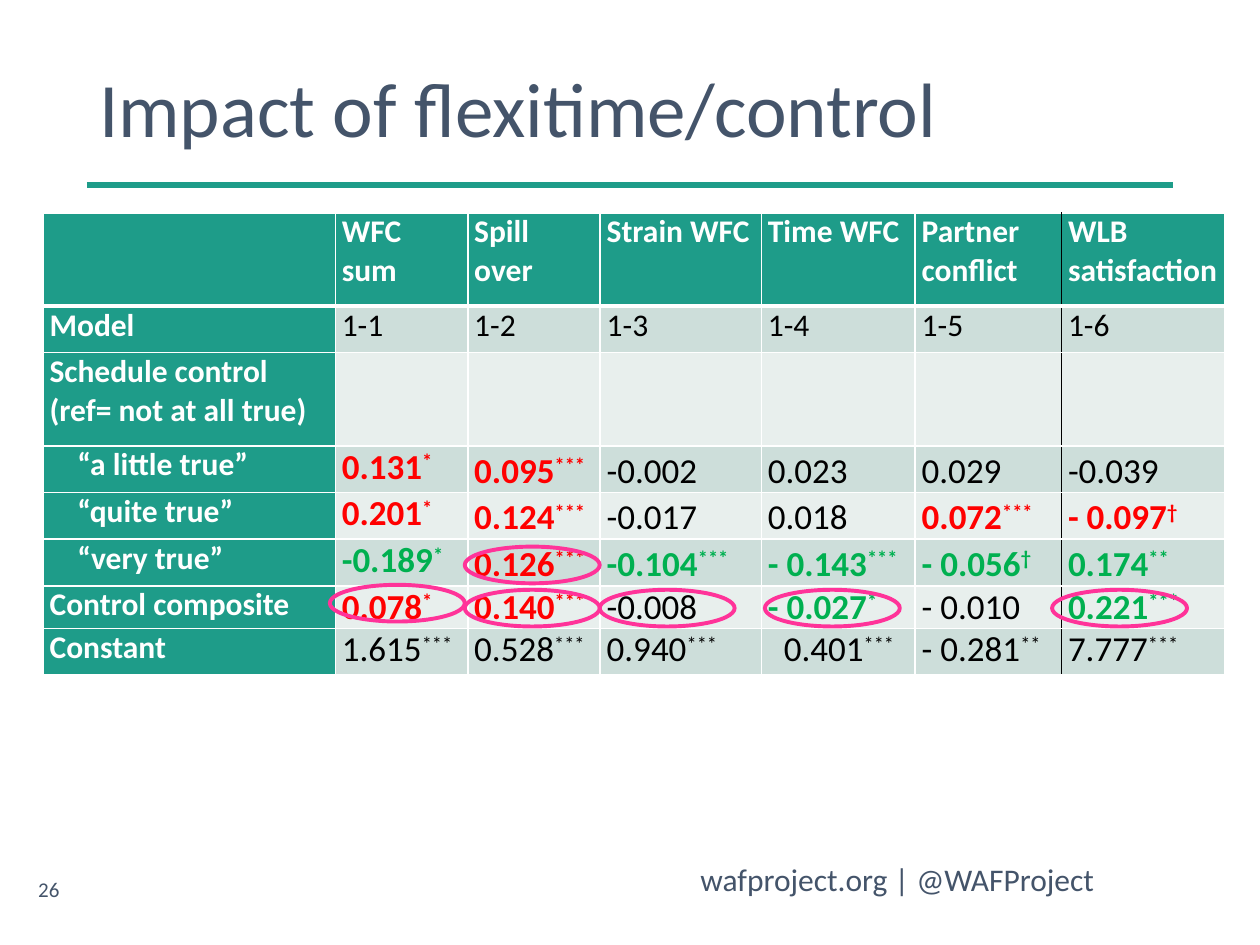
from lxml import etree
from pptx import Presentation
from pptx.dml.color import RGBColor
from pptx.enum.shapes import MSO_CONNECTOR as Connector, MSO_SHAPE as Shape
from pptx.enum.text import MSO_ANCHOR as Anchor, PP_ALIGN as Align
from pptx.oxml.ns import qn
from pptx.util import Cm, Pt

SLATE = RGBColor(0x44, 0x54, 0x6A)
TEAL = RGBColor(0x1E, 0x9C, 0x89)
BANDS = (RGBColor(0xE8, 0xEF, 0xED), RGBColor(0xCD, 0xDE, 0xDA))
WHITE = RGBColor(0xFF, 0xFF, 0xFF)
BLACK = RGBColor(0x00, 0x00, 0x00)
RED = RGBColor(0xFF, 0x00, 0x00)
GREEN = RGBColor(0x00, 0xB0, 0x50)
PINK = RGBColor(0xFF, 0x33, 0x99)
FONT = "Calibri"

COLUMN_WIDTHS = (5.89, 2.67, 2.67, 3.25, 3.1, 2.95, 3.29)
ROW_HEIGHTS = (1.88, 0.94, 1.88, 0.94, 0.94, 0.94, 0.86, 0.94)
ROWS = (
    ("", "WFC sum", "Spill over", "Strain WFC", "Time WFC", "Partner conflict", "WLB satisfaction"),
    ("Model", "1-1", "1-2", "1-3", "1-4", "1-5", "1-6"),
    ("Schedule control\n(ref= not at all true)", "", "", "", "", "", ""),
    ("“a little true”", "0.131*", "0.095***", "-0.002", "0.023", "0.029", "-0.039"),
    ("“quite true”", "0.201*", "0.124***", "-0.017", "0.018", "0.072***", "- 0.097†"),
    ("“very true”", "-0.189*", "0.126***", "-0.104***", "- 0.143***", "- 0.056†", "0.174**"),
    ("Control composite", "0.078*", "0.140***", "-0.008", "- 0.027*", "- 0.010", "0.221***"),
    ("Constant", "1.615***", "0.528***", "0.940***", "0.401***", "- 0.281**", "7.777***"),
)
LAST_COLUMN = len(COLUMN_WIDTHS) - 1
FIRST_ESTIMATE, CONSTANT = 3, len(ROWS) - 1
RINGS = ((9.37, 11.02), (6.65, 11.79), (9.37, 11.89), (12.09, 11.89), (15.42, 11.89), (21.21, 11.89))


def add_span(para, text, size, color, bold=False):
    span = para.add_run()
    span.text = text
    span.font.name = FONT
    span.font.size = Pt(size)
    span.font.bold = bold
    span.font.color.rgb = color
    return span


def add_label(page, text, size, left, top, width, height, anchor=Anchor.TOP, align=Align.LEFT):
    box = page.shapes.add_textbox(Cm(left), Cm(top), Cm(width), Cm(height))
    frame = box.text_frame
    frame.word_wrap = True
    frame.vertical_anchor = anchor
    para = frame.paragraphs[0]
    para.alignment = align
    add_span(para, text, size, SLATE)
    return para


def add_rule(page):
    rule = page.shapes.add_connector(Connector.STRAIGHT, Cm(1.75), Cm(3.73), Cm(23.65), Cm(3.73))
    rule.line.color.rgb = TEAL
    rule.line.width = Pt(3)
    etree.SubElement(rule.element.spPr, qn("a:effectLst"))


def set_border(cell, side, color, width):
    edge = etree.SubElement(cell._tc.get_or_add_tcPr(), qn(f"a:ln{side}"), w=str(Pt(width)))
    fill = etree.SubElement(edge, qn("a:solidFill"))
    etree.SubElement(fill, qn("a:srgbClr"), val=str(color))


def style_cell(cell, row, column):
    """Draw the borders first, as the schema wants them before the fill."""
    set_border(cell, "L", BLACK if column == LAST_COLUMN else WHITE, 1)
    set_border(cell, "R", BLACK if column == LAST_COLUMN - 1 else WHITE, 1)
    set_border(cell, "T", WHITE, 3 if row == 1 else 1)
    set_border(cell, "B", WHITE, 3 if row == 0 else 1)
    cell.fill.solid()
    cell.fill.fore_color.rgb = TEAL if row == 0 or column == 0 else BANDS[row % 2]
    cell.margin_left = cell.margin_right = Cm(0.13)
    cell.margin_top = cell.margin_bottom = 0
    if FIRST_ESTIMATE <= row < CONSTANT and column > 1:
        cell.vertical_anchor = Anchor.BOTTOM


def estimate_color(text, row, column):
    """Significant effects: red if they harm, green if they help."""
    if row == CONSTANT or text[-1] not in "*†":
        return BLACK
    harmful = text.startswith("-") == (column == LAST_COLUMN)
    return RED if harmful else GREEN


def indent_first_line(para, indent):
    para._p.get_or_add_pPr().set("indent", str(Cm(indent)))


def write_heading(cell, text):
    for index, line in enumerate(text.split("\n")):
        para = cell.text_frame.add_paragraph() if index else cell.text_frame.paragraphs[0]
        if line.startswith("“"):
            indent_first_line(para, 0.56)
        add_span(para, line, 18, WHITE, True)


def write_estimate(cell, text, row, column):
    para = cell.text_frame.paragraphs[0]
    color = estimate_color(text, row, column)
    bold = color != BLACK
    number = text.rstrip("*†")
    marks = text[len(number):]
    if row == CONSTANT and column == 4:
        indent_first_line(para, 0.32)
    add_span(para, number, 20, color, bold)
    if marks:
        span = add_span(para, marks, 20, color, bold)
        span._r.get_or_add_rPr().set("baseline", "30000")


def add_results_table(page):
    table = page.shapes.add_table(
        len(ROWS), len(COLUMN_WIDTHS), Cm(0.87), Cm(4.29),
        Cm(sum(COLUMN_WIDTHS)), Cm(sum(ROW_HEIGHTS))).table
    table.first_row = table.horz_banding = False
    for column, width in zip(table.columns, COLUMN_WIDTHS):
        column.width = Cm(width)
    for row, (height, texts) in enumerate(zip(ROW_HEIGHTS, ROWS)):
        table.rows[row].height = Cm(height)
        for column, text in enumerate(texts):
            cell = table.cell(row, column)
            style_cell(cell, row, column)
            if not text:
                continue
            if row == 0 or column == 0:
                write_heading(cell, text)
            elif row < FIRST_ESTIMATE:
                add_span(cell.text_frame.paragraphs[0], text, 18, BLACK)
            else:
                write_estimate(cell, text, row, column)


def add_ring(page, left, top):
    ring = page.shapes.add_shape(Shape.OVAL, Cm(left), Cm(top), Cm(2.72), Cm(0.74))
    ring.shadow.inherit = False
    ring.fill.background()
    ring.line.color.rgb = PINK
    ring.line.width = Pt(2.25)


def main():
    deck = Presentation()
    deck.slide_width, deck.slide_height = Cm(25.4), Cm(19.05)
    page = deck.slides.add_slide(deck.slide_layouts[6])
    add_label(page, "wafproject.org | @WAFProject", 18, 13.87, 17.22, 15.09, 1.02)
    add_rule(page)
    title = add_label(page, "Impact of flexitime/control", 44, 1.75, 1.02, 21.9, 2.49, Anchor.MIDDLE)
    title.line_spacing = 0.9
    add_label(page, "26", 12, 0.36, 17.42, 1.09, 1.02, Anchor.MIDDLE, Align.RIGHT)
    add_results_table(page)
    for left, top in RINGS:
        add_ring(page, left, top)
    deck.save("out.pptx")


if __name__ == "__main__":
    main()
